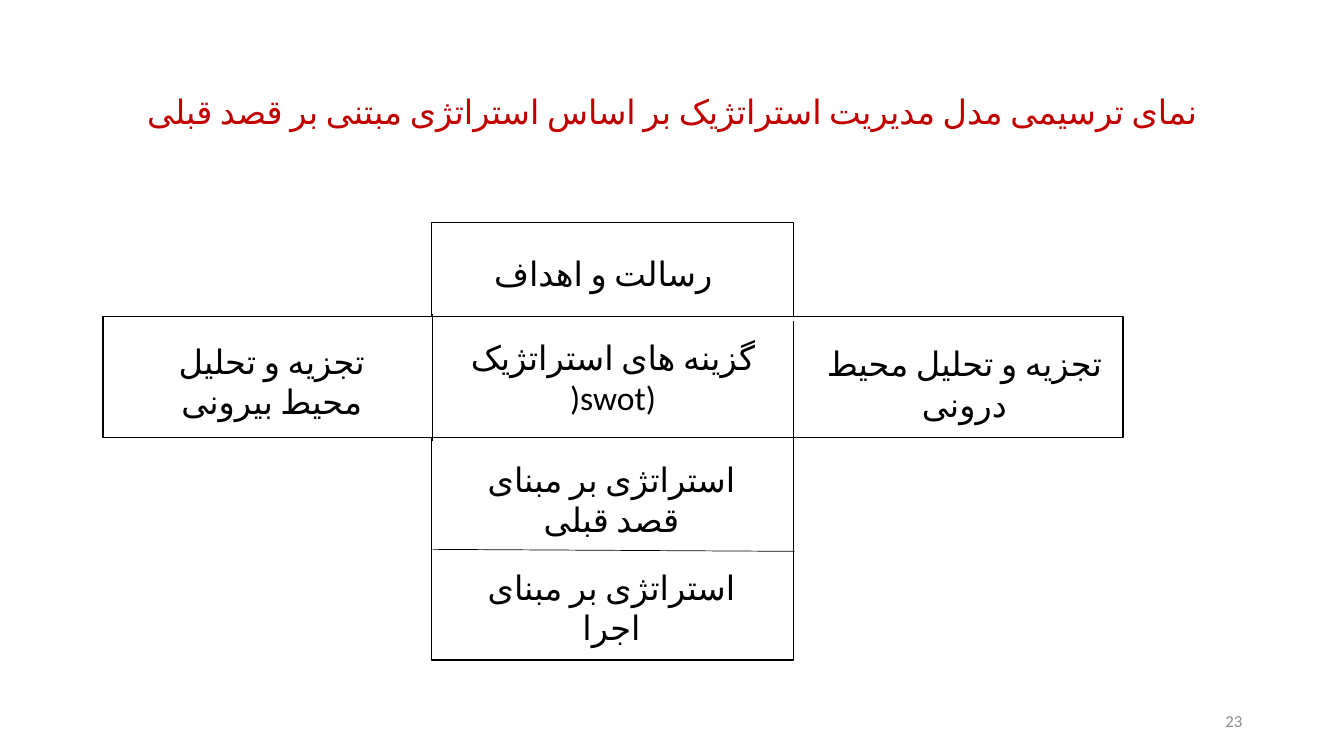
"""Build a slide showing the cross-shaped model of strategic management."""
from dataclasses import dataclass

from lxml.etree import SubElement
from pptx import Presentation
from pptx.dml.color import RGBColor
from pptx.enum.lang import MSO_LANGUAGE_ID
from pptx.enum.shapes import MSO_CONNECTOR, MSO_SHAPE
from pptx.enum.text import MSO_ANCHOR, PP_ALIGN
from pptx.oxml.ns import qn
from pptx.slide import Slide
from pptx.text.text import TextFrame
from pptx.util import Inches, Pt

BLACK, WHITE, RED, GREY = "000000", "FFFFFF", "C00000", "8C8C8C"
FONT = "Calibri"


@dataclass(frozen=True)
class Box:
    left: float
    top: float
    width: float
    height: float
    lines: tuple[str, ...] = ()
    outline: str = WHITE


@dataclass(frozen=True)
class Divider:
    x1: float
    y1: float
    x2: float
    y2: float


@dataclass(frozen=True)
class Caption:
    left: float
    top: float
    width: float
    height: float
    text: str
    size: int
    color: str
    align: PP_ALIGN
    spacing: float = 1.0


COLUMN = Box(4.28, 2.21, 3.59, 4.34, outline=BLACK)
EXECUTION_DIVIDER = Divider(7.88, 5.47, 4.29, 5.45)
ROW = Box(1.02, 3.14, 10.12, 1.2, ("گزینه های استراتژیک", ")swot)"), BLACK)
ROW_DIVIDERS = (Divider(7.87, 3.18, 7.87, 4.52), Divider(4.29, 3.12, 4.29, 4.38))
LABELS = (
    Box(4.46, 2.39, 3.05, 0.64, ("رسالت و اهداف",)),
    Box(4.46, 4.55, 3.21, 0.8, ("استراتژی بر مبنای قصد قبلی",)),
    Box(4.46, 5.66, 3.21, 0.73, ("استراتژی بر مبنای اجرا",)),
    Box(8.02, 3.39, 3.09, 0.83, ("تجزیه و تحلیل محیط درونی",)),
    Box(1.24, 3.39, 2.91, 0.78, ("تجزیه و تحلیل محیط بیرونی",)),
)
TITLE = Caption(
    0.92, 0.4, 11.5, 1.45,
    "نمای ترسیمی مدل مدیریت استراتژیک بر اساس استراتژی مبتنی بر قصد قبلی",
    24, RED, PP_ALIGN.CENTER, 0.9,
)
PAGE_NUMBER = Caption(9.42, 6.95, 3, 0.4, "23", 12, GREY, PP_ALIGN.RIGHT)


def rgb(value: str) -> RGBColor:
    """Turn a hex string into a colour."""
    return RGBColor.from_string(value)


def write(frame: TextFrame, lines: tuple[str, ...], size: int, color: str,
          align: PP_ALIGN) -> None:
    """Fill a text frame with one paragraph per line."""
    frame.word_wrap = True
    frame.vertical_anchor = MSO_ANCHOR.MIDDLE
    for index, line in enumerate(lines):
        paragraph = frame.add_paragraph() if index else frame.paragraphs[0]
        paragraph.text = line
        paragraph.alignment = align
        paragraph.font.name = FONT
        paragraph.font.size = Pt(size)
        paragraph.font.color.rgb = rgb(color)
        paragraph.runs[0].font.language_id = MSO_LANGUAGE_ID.FARSI
        defaults = paragraph._p.pPr.find(qn("a:defRPr"))
        SubElement(defaults, qn("a:cs"), typeface=FONT)


def draw_box(slide: Slide, box: Box) -> None:
    """Draw a white rectangle with its text."""
    rectangle = slide.shapes.add_shape(
        MSO_SHAPE.RECTANGLE, Inches(box.left), Inches(box.top),
        Inches(box.width), Inches(box.height))
    rectangle.shadow.inherit = False
    rectangle.fill.solid()
    rectangle.fill.fore_color.rgb = rgb(WHITE)
    rectangle.line.color.rgb = rgb(box.outline)
    rectangle.line.width = Pt(1)
    write(rectangle.text_frame, box.lines, 24, BLACK, PP_ALIGN.CENTER)


def draw_divider(slide: Slide, divider: Divider) -> None:
    """Draw a thin black line."""
    line = slide.shapes.add_connector(
        MSO_CONNECTOR.STRAIGHT, Inches(divider.x1), Inches(divider.y1),
        Inches(divider.x2), Inches(divider.y2))
    line.line.color.rgb = rgb(BLACK)
    line.line.width = Pt(0.5)
    SubElement(line._element.spPr, qn("a:effectLst"))


def draw_caption(slide: Slide, caption: Caption) -> None:
    """Draw text without a frame."""
    frame = slide.shapes.add_textbox(
        Inches(caption.left), Inches(caption.top),
        Inches(caption.width), Inches(caption.height)).text_frame
    write(frame, (caption.text,), caption.size, caption.color, caption.align)
    frame.paragraphs[0].line_spacing = caption.spacing


def main() -> None:
    """Build and save the slide."""
    presentation = Presentation()
    presentation.slide_width = Inches(13.33)
    presentation.slide_height = Inches(7.5)
    slide = presentation.slides.add_slide(presentation.slide_layouts[6])
    draw_caption(slide, TITLE)
    draw_box(slide, COLUMN)
    draw_divider(slide, EXECUTION_DIVIDER)
    draw_box(slide, ROW)
    for divider in ROW_DIVIDERS:
        draw_divider(slide, divider)
    for label in LABELS:
        draw_box(slide, label)
    draw_caption(slide, PAGE_NUMBER)
    presentation.save("out.pptx")


if __name__ == "__main__":
    main()
